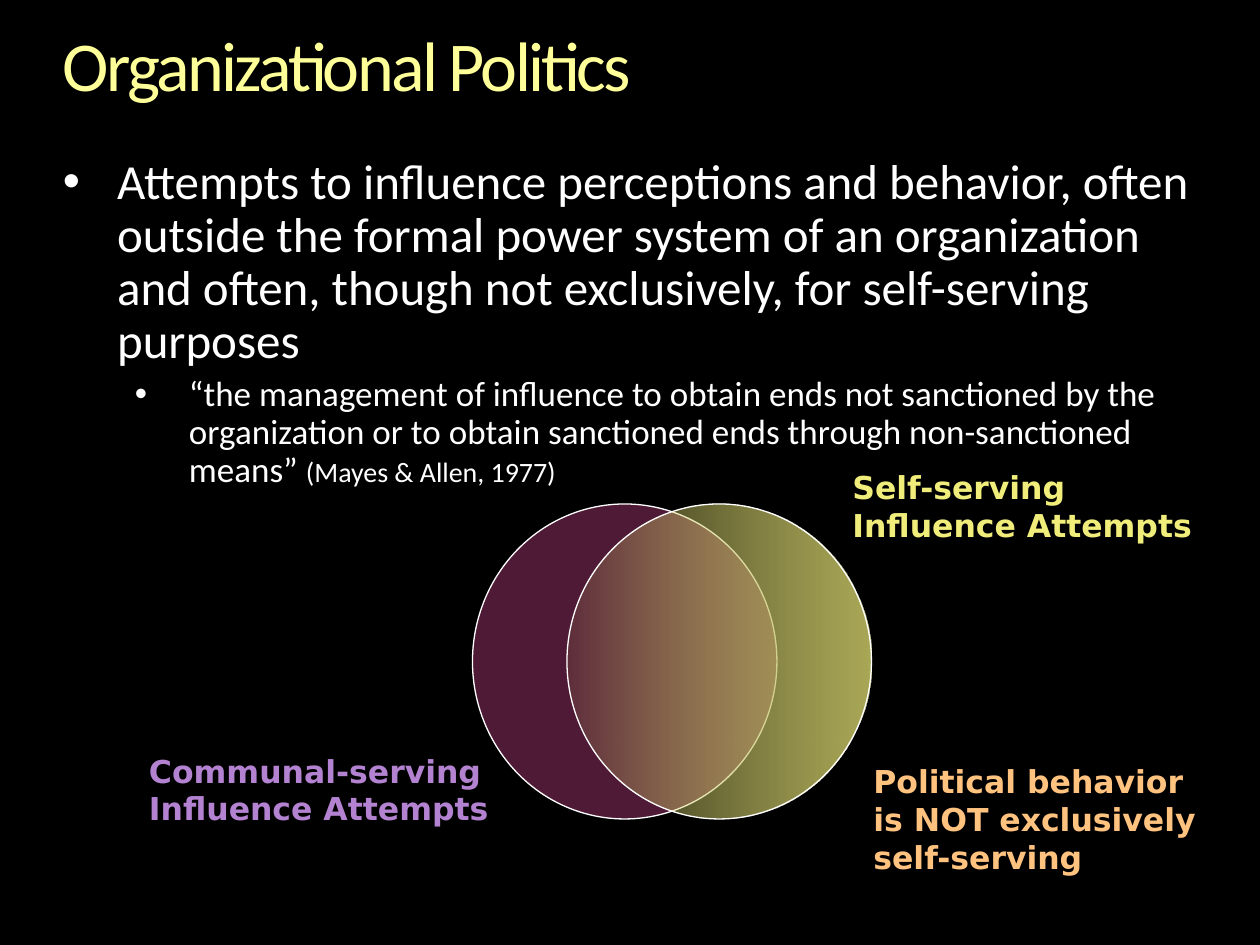
from lxml import etree
from pptx import Presentation
from pptx.dml.color import RGBColor
from pptx.enum.shapes import MSO_SHAPE
from pptx.enum.text import MSO_ANCHOR
from pptx.oxml.ns import qn
from pptx.util import Inches, Pt

OVAL = MSO_SHAPE.OVAL
TOP = MSO_ANCHOR.TOP
UNIT = Inches(1) // 12
COLORS = {
    "background": "000000",
    "text": "FFFFFF",
    "title": "FFFF99",
    "communal": "993366",
    "self_start": "F0ED7B",
    "self_end": "ACAA58",
    "communal_label": "B382D0",
    "political_label": "FFC27F",
}


def color(name):
    return RGBColor.from_string(COLORS[name])


def add_text(column, row, columns, rows, inset=True):
    box = page.shapes.add_textbox(*(round(n * UNIT) for n in (column, row, columns, rows)))
    frame = box.text_frame
    frame.word_wrap = True
    frame.vertical_anchor = TOP
    if not inset:
        frame.margin_left = frame.margin_right = frame.margin_top = frame.margin_bottom = 0
    return frame


deck = Presentation()
deck.slide_width, deck.slide_height = 120 * UNIT, 90 * UNIT
page = deck.slides.add_slide(deck.slide_layouts[6])
page.background.fill.solid()
page.background.fill.fore_color.rgb = color("background")

circles = []
for column in (45, 54):
    circle = page.shapes.add_shape(OVAL, column * UNIT, 48 * UNIT, 29 * UNIT, 30 * UNIT)
    circle.shadow.inherit = False
    circle.line.color.rgb = color("text")
    circle.line.width = Pt(0.75)
    circles.append(circle)
communal_circle, self_circle = circles

communal_circle.fill.solid()
communal_circle.fill.fore_color.rgb = color("communal")
self_circle.fill.gradient()
self_circle.fill.gradient_angle = 0
for stop, position, name in zip(self_circle.fill.gradient_stops, (0, 1), ("self_start", "self_end")):
    stop.position = position
    stop.color.rgb = color(name)
for circle, opacity in ((communal_circle, 52), (self_circle, 9)):
    first_color = next(circle._element.spPr.iter(qn("a:srgbClr")))
    etree.SubElement(first_color, qn("a:alpha"), val=str(opacity * 1000))

title = add_text(6, 3, 108, 9, inset=False).paragraphs[0]
title.line_spacing = 0.9
span = title.add_run()
span.text = "Organizational Politics"
span.font.name = "Calibri"
span.font.size = Pt(40)
span.font.color.rgb = color("title")
span._r.get_or_add_rPr().set("spc", "-150")

body = add_text(6, 15, 108, 32, inset=False)
bullets = [
    (0, 0.43, 0, [("Attempts to influence perceptions and behavior, often outside the formal power system "
                   "of an organization and often, though not exclusively, for self-serving purposes", 28)]),
    (1, 1, 4, [("“the management of influence to obtain ends not sanctioned by the organization "
                "or to obtain sanctioned ends through non-sanctioned means” ", 20),
               ("(Mayes & Allen, 1977)", 16)]),
]
for level, indent, space, spans in bullets:
    para = body.add_paragraph() if level else body.paragraphs[0]
    para.level = level
    para.line_spacing = 0.9
    para.space_before = Pt(space)
    properties = para._p.get_or_add_pPr()
    properties.set("marL", str(Inches(indent)))
    properties.set("indent", str(Inches(-0.43)))
    etree.SubElement(properties, qn("a:buFont"), typeface="Arial")
    etree.SubElement(properties, qn("a:buChar"), char="•")
    para.font.name = "Calibri"
    para.font.color.rgb = color("text")
    for words, size in spans:
        span = para.add_run()
        span.text = words
        span.font.size = Pt(size)

labels = [
    ("Self-serving Influence Attempts", "self_start", 80, 44, 37, 8.4),
    ("Communal-serving Influence Attempts", "communal_label", 13, 71, 38, 8.4),
    ("Political behavior is NOT exclusively self-serving", "political_label", 82, 72, 34, 12),
]
for words, name, *place in labels:
    para = add_text(*place).paragraphs[0]
    para.text = words
    para.font.name = "DejaVu Sans"
    para.font.size = Pt(18)
    para.font.bold = True
    para.font.color.rgb = color(name)

deck.save("out.pptx")
